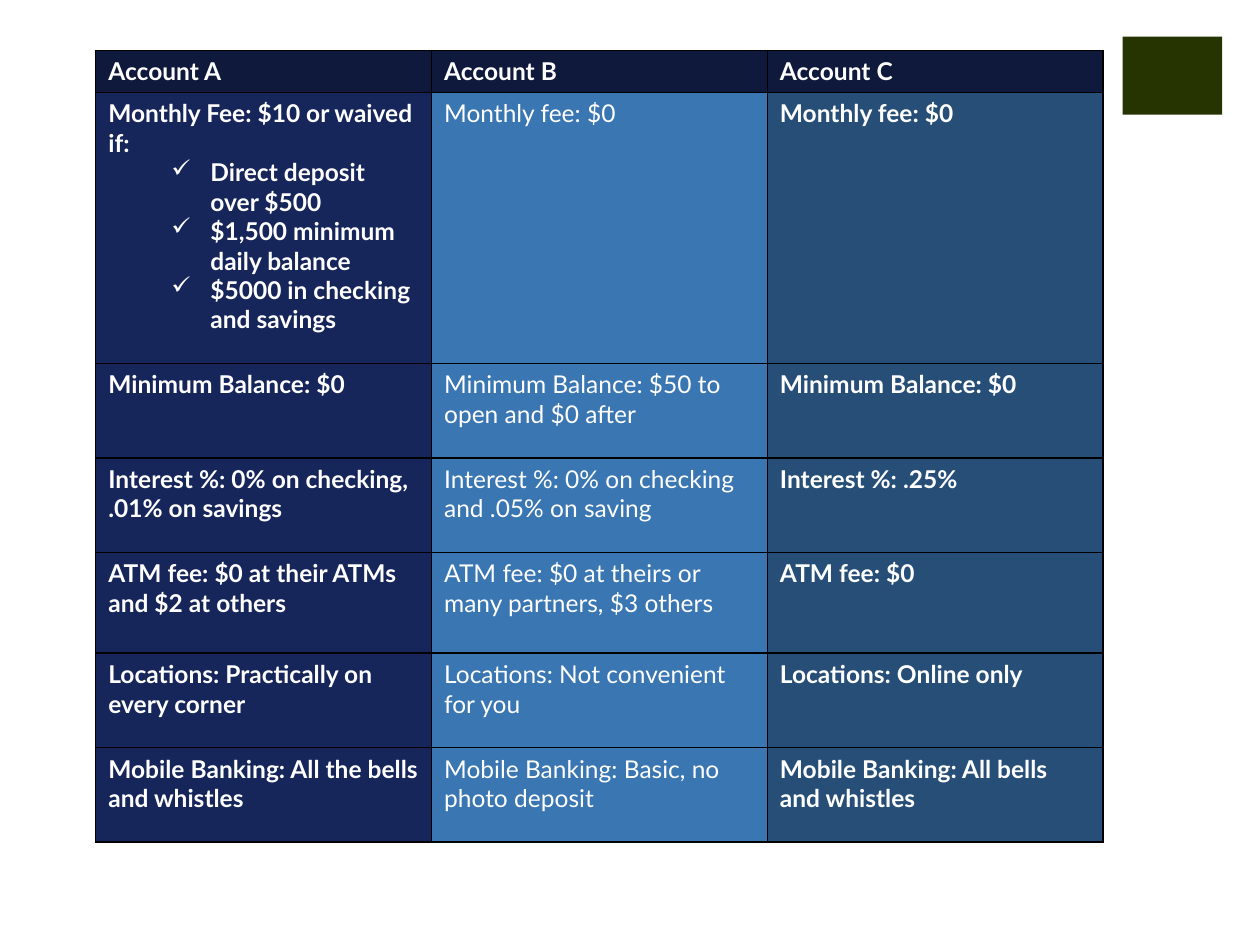
from dataclasses import dataclass

from lxml import etree
from pptx import Presentation
from pptx.dml.color import RGBColor
from pptx.enum.shapes import MSO_SHAPE
from pptx.oxml.ns import qn
from pptx.util import Inches, Pt

RECT = MSO_SHAPE.RECTANGLE


@dataclass(frozen=True)
class Theme:
    font: str = "Lato"
    size: int = 14
    text: str = "FFFFFF"
    accent: str = "263401"
    border: str = "000000"
    border_width: int = 1
    header: str = "0F193C"
    columns: tuple = ("16255A", "3A76B2", "264E77")
    bold_columns: tuple = (True, False, True)


class SlideBuilder:
    def __init__(self, slide, theme):
        self.slide, self.theme = slide, theme

    def block(self, x, y, w, h, color):
        s = self.slide.shapes.add_shape(RECT, Inches(x), Inches(y), Inches(w), Inches(h))
        s.shadow.inherit = False
        s.fill.solid()
        s.fill.fore_color.rgb = RGBColor.from_string(color)
        s.line.fill.background()

    def table(self, x, y, col_width, row_heights, rows):
        t = self.theme
        n_cols = len(rows[0])
        frame = self.slide.shapes.add_table(
            len(rows), n_cols, Inches(x), Inches(y),
            Inches(col_width * n_cols), Inches(sum(row_heights)))
        table = frame.table
        for col in table.columns:
            col.width = Inches(col_width)
        for row, height in zip(table.rows, row_heights):
            row.height = Inches(height)
        for i, row in enumerate(rows):
            for j, content in enumerate(row):
                fill = t.columns[j] if i else t.header
                bold = t.bold_columns[j] if i else True
                self.cell(table.cell(i, j), content, fill, bold)

    def cell(self, cell, content, fill, bold):
        self.borders(cell)
        cell.fill.solid()
        cell.fill.fore_color.rgb = RGBColor.from_string(fill)
        # A list holds a lead line followed by its check-marked points
        lead, *points = content if isinstance(content, list) else [content]
        tf = cell.text_frame
        self.run(tf.paragraphs[0], lead, bold)
        for point in points:
            p = tf.add_paragraph()
            self.check_bullet(p)
            self.run(p, point, bold)

    def run(self, p, text, bold):
        r = p.add_run()
        r.text = text
        style = {"name": self.theme.font, "size": Pt(self.theme.size), "bold": bold}
        for key, value in style.items():
            setattr(r.font, key, value)
        r.font.color.rgb = RGBColor.from_string(self.theme.text)

    def check_bullet(self, p):
        p.level = 1
        pPr = p._p.get_or_add_pPr()
        pPr.set("marL", str(Inches(0.81)))
        pPr.set("indent", str(Inches(-0.31)))
        etree.SubElement(pPr, qn("a:buChar"), char="✓")

    def borders(self, cell):
        tcPr = cell._tc.get_or_add_tcPr()
        for side in ("L", "R", "T", "B"):
            ln = etree.SubElement(tcPr, qn(f"a:ln{side}"), w=str(Pt(self.theme.border_width)))
            solid = etree.SubElement(ln, qn("a:solidFill"))
            etree.SubElement(solid, qn("a:srgbClr"), val=self.theme.border)


ACCOUNTS = [
    ["Account A", "Account B", "Account C"],
    [["Monthly Fee: $10 or waived if:",
      "Direct deposit over $500",
      "$1,500 minimum daily balance",
      "$5000 in checking and savings"],
     "Monthly fee: $0", "Monthly fee: $0"],
    ["Minimum Balance: $0",
     "Minimum Balance: $50 to open and $0 after",
     "Minimum Balance: $0"],
    ["Interest %: 0% on checking, .01% on savings",
     "Interest %: 0% on checking and .05% on saving",
     "Interest %: .25%"],
    ["ATM fee: $0 at their ATMs and $2 at others",
     "ATM fee: $0 at theirs or many partners, $3 others",
     "ATM fee: $0"],
    ["Locations: Practically on every corner",
     "Locations: Not convenient for you",
     "Locations: Online only"],
    ["Mobile Banking: All the bells and whistles",
     "Mobile Banking: Basic, no photo deposit",
     "Mobile Banking: All bells and whistles"],
]
ROW_HEIGHTS = [0.33, 2.15, 0.75, 0.75, 0.8, 0.75, 0.75]


def main():
    prs = Presentation()
    prs.slide_width, prs.slide_height = Inches(10), Inches(7.5)
    theme = Theme()
    # Blank layout: the slide has no title
    builder = SlideBuilder(prs.slides.add_slide(prs.slide_layouts[6]), theme)

    # Corner accent
    builder.block(8.91, 0.29, 0.79, 0.62, theme.accent)

    # Account comparison
    builder.table(0.76, 0.4, 2.665, ROW_HEIGHTS, ACCOUNTS)

    prs.save("out.pptx")


if __name__ == "__main__":
    main()
